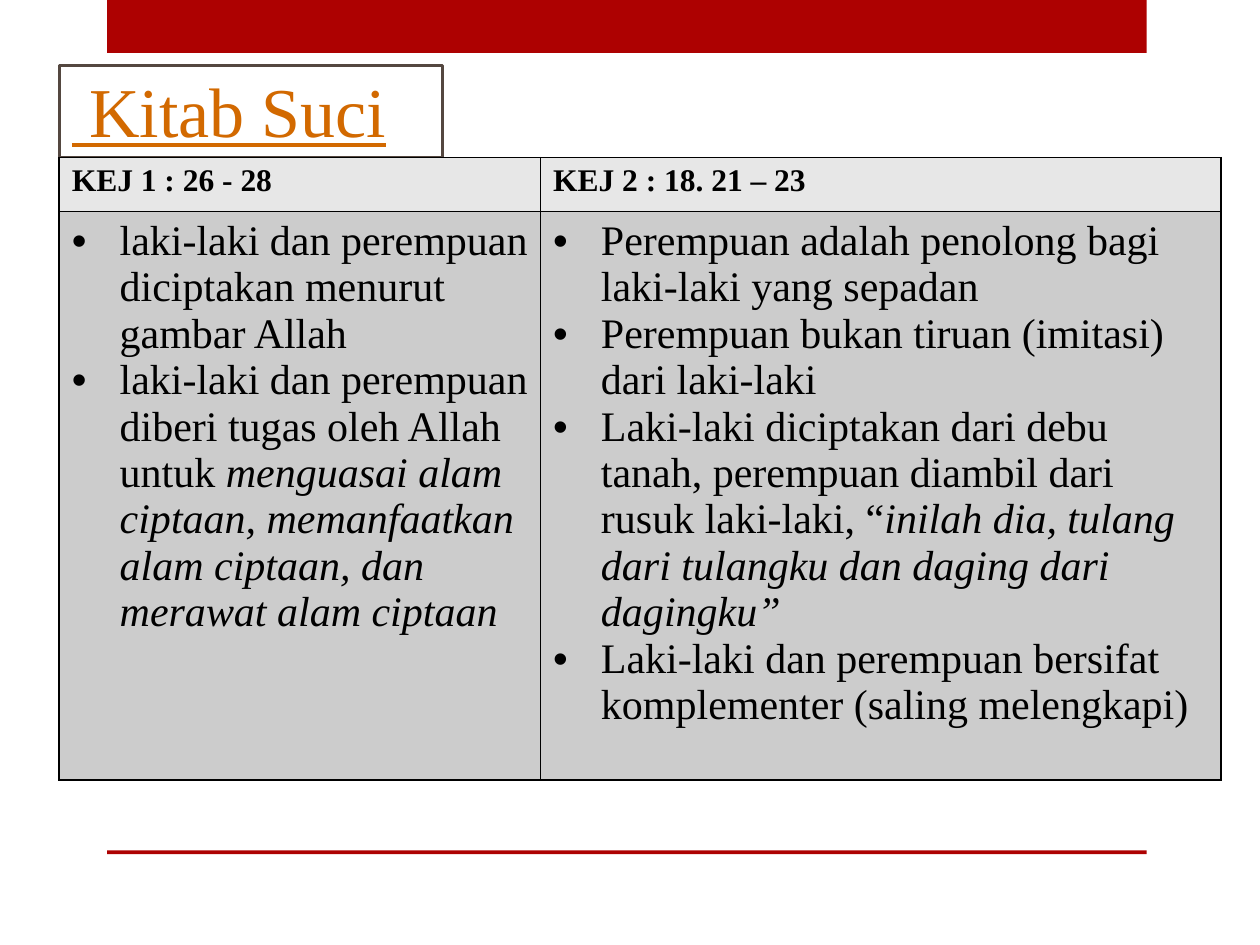
from lxml import etree
from pptx import Presentation
from pptx import util as u
from pptx.dml.color import RGBColor
from pptx.enum import shapes, text
from pptx.oxml import ns

COLORS = {"band": "AD0101", "frame": "544740", "title": "D26900",
          "text": "000000", "head": "E7E7E7", "body": "CCCCCC"}
TITLE = {"size": u.Pt(40), "underline": True, "bold": False}
HEAD = {"size": u.Pt(18), "bold": True}
BODY = {"size": u.Pt(24), "bold": False}
ITALIC = {**BODY, "italic": True}

HEADERS = ["KEJ 1 : 26 - 28", "KEJ 2 : 18. 21 – 23"]
# Each point is a plain part, optionally followed by an italic part.
POINTS = [
    [("laki-laki dan perempuan diciptakan menurut gambar Allah",),
     ("laki-laki dan perempuan diberi tugas oleh Allah untuk ",
      "menguasai alam ciptaan, memanfaatkan alam ciptaan, dan merawat alam ciptaan")],
    [("Perempuan adalah penolong bagi laki-laki yang sepadan",),
     ("Perempuan bukan tiruan (imitasi) dari laki-laki",),
     ("Laki-laki diciptakan dari debu tanah, perempuan diambil dari rusuk laki-laki, “",
      "inilah dia, tulang dari tulangku dan daging dari dagingku”"),
     ("Laki-laki dan perempuan bersifat komplementer (saling melengkapi)",)],
]


def rgb(name):
    return RGBColor.from_string(COLORS[name])


def inches(*values):
    return [u.Inches(v) for v in values]


class Deck:
    font = "Times New Roman"

    def __init__(self):
        self.prs = Presentation()
        self.prs.slide_width, self.prs.slide_height = inches(10, 7.5)
        self.s = self.prs.slides.add_slide(self.prs.slide_layouts[5])

    def run(self, p, words, style, color="text"):
        r = p.add_run()
        r.text = words
        r.font.name = self.font
        r.font.color.rgb = rgb(color)
        for key, value in style.items():
            setattr(r.font, key, value)

    def band(self, *box):
        sp = self.s.shapes.add_shape(shapes.MSO_SHAPE.RECTANGLE, *inches(*box))
        sp.shadow.inherit = False
        sp.fill.solid()
        sp.fill.fore_color.rgb = rgb("band")
        sp.line.fill.background()

    def title(self, words, *box):
        sp = self.s.shapes.title
        sp.left, sp.top, sp.width, sp.height = inches(*box)
        sp.line.color.rgb = rgb("frame")
        sp.line.width = u.Pt(1.75)
        tf = sp.text_frame
        tf.auto_size = text.MSO_AUTO_SIZE.NONE
        tf.vertical_anchor = text.MSO_ANCHOR.BOTTOM
        p = tf.paragraphs[0]
        p.alignment = text.PP_ALIGN.LEFT
        self.run(p, words, TITLE, "title")

    def bullet(self, p):
        """Give the paragraph a round bullet with a hanging indent."""
        pPr = p._p.get_or_add_pPr()
        indent = u.Inches(0.38)
        pPr.set("marL", str(indent))
        pPr.set("indent", str(-indent))
        etree.SubElement(pPr, ns.qn("a:buFont")).set("typeface", "Arial")
        etree.SubElement(pPr, ns.qn("a:buChar")).set("char", "•")

    def cell(self, cell, fill):
        """Fill the cell and draw a thin border on all four sides."""
        cell.fill.solid()
        cell.fill.fore_color.rgb = rgb(fill)
        tcPr = cell._tc.get_or_add_tcPr()
        for i, side in enumerate(("lnL", "lnR", "lnT", "lnB")):
            ln = etree.Element(ns.qn(f"a:{side}"), w=str(u.Pt(1)))
            solid = etree.SubElement(ln, ns.qn("a:solidFill"))
            etree.SubElement(solid, ns.qn("a:srgbClr")).set("val", COLORS["text"])
            tcPr.insert(i, ln)

    def table(self, left, top, widths, heights):
        frame = self.s.shapes.add_table(
            len(heights), len(widths),
            *inches(left, top, sum(widths), sum(heights)))
        table = frame.table
        for row, height in zip(table.rows, heights):
            row.height = u.Inches(height)
        for c, width in enumerate(widths):
            table.columns[c].width = u.Inches(width)
            head, body = table.cell(0, c), table.cell(1, c)
            self.cell(head, "head")
            self.cell(body, "body")
            self.run(head.text_frame.paragraphs[0], HEADERS[c], HEAD)
            tf = body.text_frame
            for i, parts in enumerate(POINTS[c]):
                p = tf.add_paragraph() if i else tf.paragraphs[0]
                self.bullet(p)
                for words, style in zip(parts, (BODY, ITALIC)):
                    self.run(p, words, style)


def main():
    deck = Deck()
    deck.band(0.85, 0, 8.25, 0.42)
    deck.band(0.85, 6.75, 8.25, 0.03)
    deck.title(" Kitab Suci", 0.47, 0.52, 3.04, 0.73)
    deck.table(0.47, 1.25, widths=[3.82, 5.4], heights=[0.43, 4.51])
    deck.prs.save("out.pptx")


if __name__ == "__main__":
    main()
